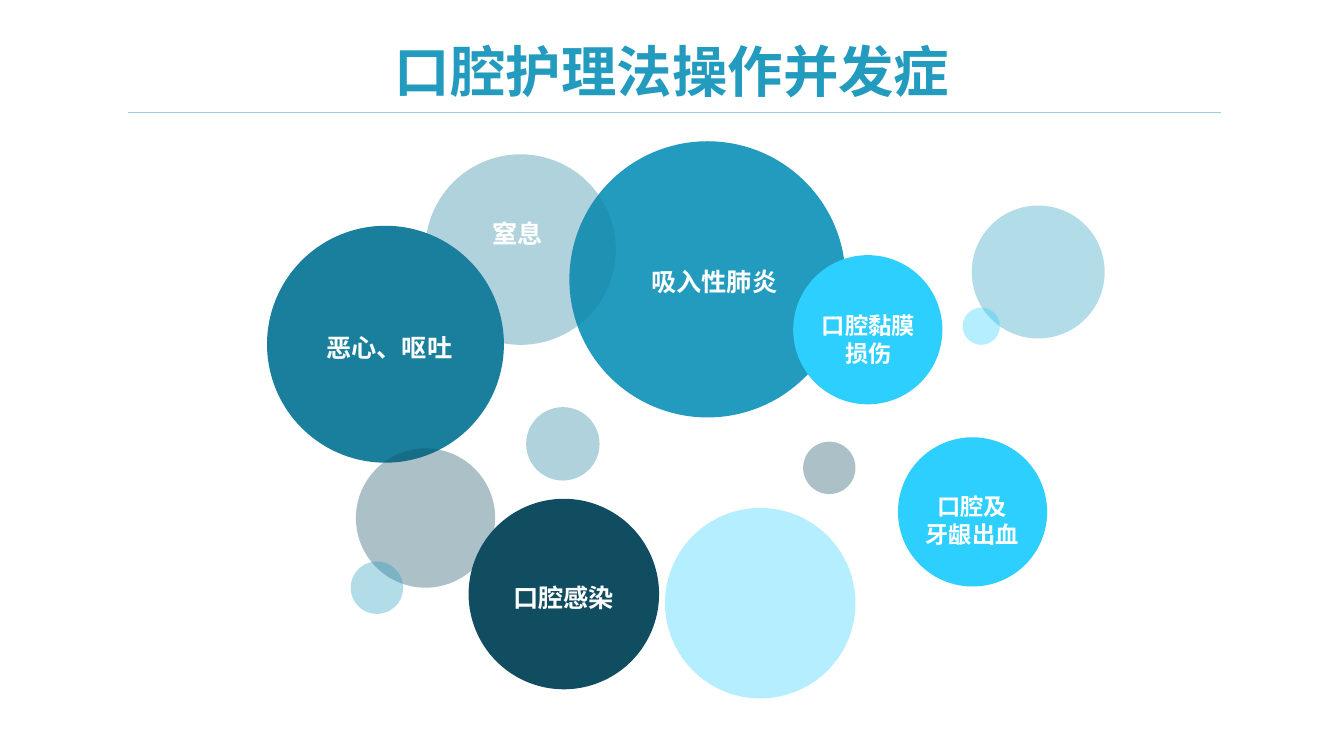
"""Bubble slide listing the complications of oral care."""
from dataclasses import dataclass

from lxml import etree
from pptx import Presentation
from pptx import util as u
from pptx.dml.color import RGBColor
from pptx.enum import shapes, text
from pptx.oxml.ns import qn


@dataclass(frozen=True)
class Theme:
    """Colours, type sizes and tint of the slide."""
    font: str = "Arial"
    blue: str = "229BBF"
    teal: str = "1A7F9C"
    navy: str = "104D60"
    sky: str = "2DCFFF"
    rule: str = "9CCBE9"
    white: str = "FFFFFF"
    title: float = 39.6
    label: float = 18
    small: float = 16.6
    tint: int = 35


T = Theme()

BUBBLES = [
    (24.49, 5.18, 3.35, T.blue, T.tint),
    (6.73, 5.69, 5.97, T.teal, 100),
    (11.81, 12.57, 4.8, T.navy, 100),
    (14.35, 3.56, 6.96, T.blue, 100),
    (19.99, 6.43, 3.76, T.sky, 100),
    (8.97, 11.3, 3.51, T.navy, T.tint),
    (16.76, 12.8, 4.8, T.sky, T.tint),
    (10.72, 3.89, 4.8, T.teal, T.tint),
    (13.26, 10.26, 1.85, T.teal, T.tint),
    (20.24, 11.13, 1.32, T.navy, T.tint),
    (8.84, 14.15, 1.32, T.blue, T.tint),
    (24.26, 7.75, 0.94, T.sky, T.tint),
    (22.63, 11.02, 3.76, T.sky, 100),
]

LABELS = [
    (7.42, 8.38, 4.78, 1.27, ["恶心、呕吐"], T.label),
    (15.42, 6.71, 5.16, 1.04, ["吸入性肺炎"], T.label),
    (11.99, 14.68, 4.42, 1.22, ["口腔感染"], T.label),
    (19.71, 7.85, 4.34, 1.17, ["口腔黏膜", "损伤"], T.small),
    (22.33, 12.4, 4.34, 1.17, ["口腔及", "牙龈出血"], T.small),
    (10.46, 5.51, 5.16, 1.04, ["窒息"], T.label),
]


def add_bubble(s, left, top, size, color, opacity):
    """Draw a borderless circle, see-through when opacity is below 100."""
    sp = s.shapes.add_shape(shapes.MSO_SHAPE.OVAL, u.Cm(left), u.Cm(top), u.Cm(size), u.Cm(size))
    sp.shadow.inherit = False
    sp.line.fill.background()
    sp.fill.solid()
    sp.fill.fore_color.rgb = RGBColor.from_string(color)
    if opacity < 100:
        clr = sp.fill._xPr.find(".//" + qn("a:srgbClr"))
        etree.SubElement(clr, qn("a:alpha"), val=str(opacity * 1000))


def add_text(s, left, top, width, height, lines, size, color=T.white, spacing=1.0):
    """Place centred bold lines in a text box without margins."""
    sp = s.shapes.add_textbox(u.Cm(left), u.Cm(top), u.Cm(width), u.Cm(height))
    tf = sp.text_frame
    tf.word_wrap = True
    tf.vertical_anchor = text.MSO_ANCHOR.TOP
    tf.margin_left = tf.margin_top = tf.margin_right = tf.margin_bottom = 0
    for i, line in enumerate(lines):
        p = tf.add_paragraph() if i else tf.paragraphs[0]
        p.alignment = text.PP_ALIGN.CENTER
        p.line_spacing = spacing
        r = p.add_run()
        r.text = line
        r.font.name = T.font
        r.font.size = u.Pt(size)
        r.font.bold = True
        r.font.color.rgb = RGBColor.from_string(color)


def add_rule(s, left, right, top):
    """Draw the thin horizontal line under the title."""
    sp = s.shapes.add_connector(
        shapes.MSO_CONNECTOR.STRAIGHT, u.Cm(left), u.Cm(top), u.Cm(right), u.Cm(top))
    sp.line.color.rgb = RGBColor.from_string(T.rule)
    sp.line.width = u.Pt(0.5)
    etree.SubElement(sp._element.spPr, qn("a:effectLst"))


def main():
    """Build the slide and save it."""
    prs = Presentation()
    prs.slide_width, prs.slide_height = u.Cm(33.87), u.Cm(19.05)
    s = prs.slides.add_slide(prs.slide_layouts[6])
    add_text(s, 6.5, 1.12, 20.88, 1.32, ["口腔护理法操作并发症"], T.title, T.blue, 0.9)
    add_rule(s, 3.23, 30.78, 2.84)
    for bubble in BUBBLES:
        add_bubble(s, *bubble)
    for label in LABELS:
        add_text(s, *label)
    prs.save("out.pptx")


if __name__ == "__main__":
    main()
